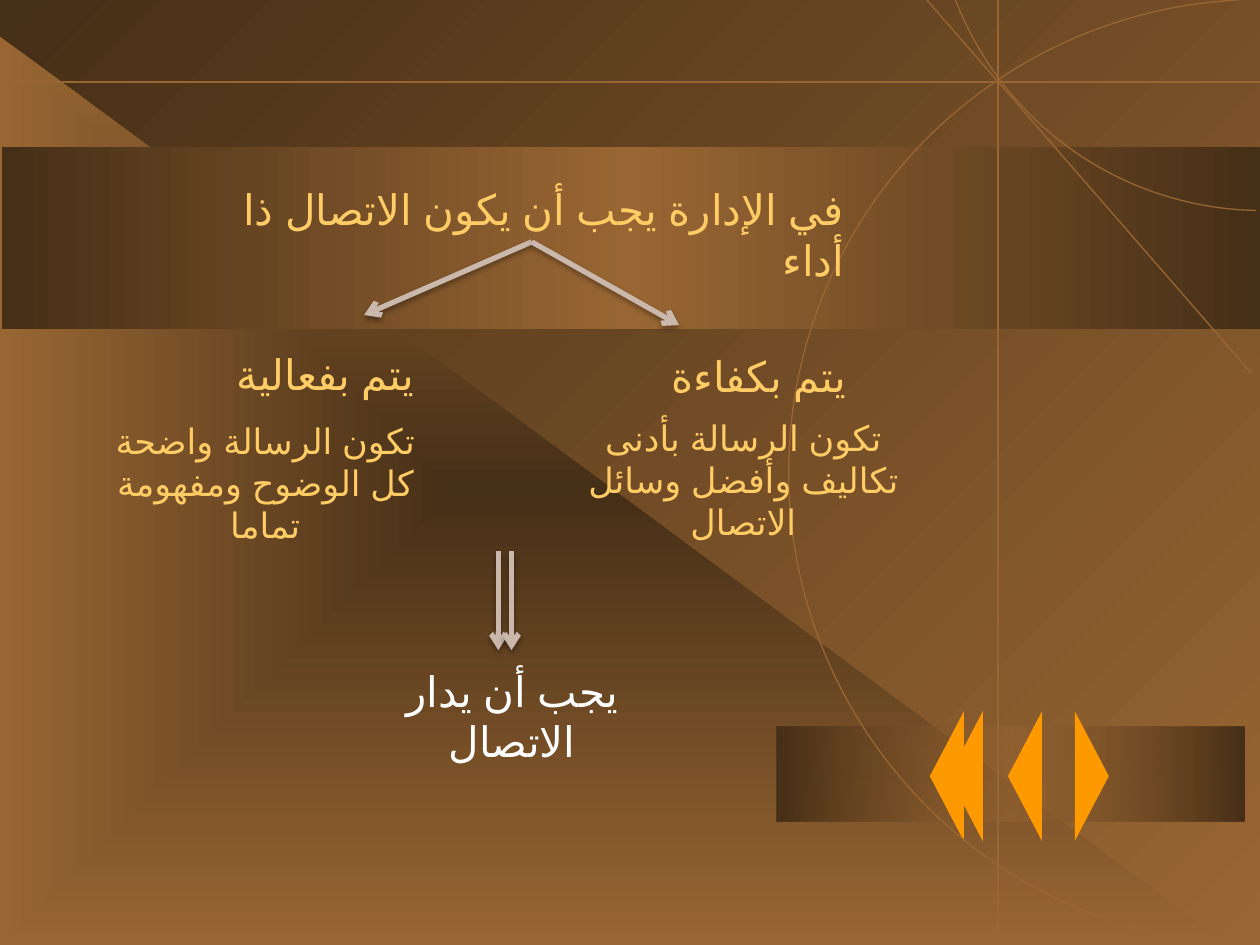
"""Build a slide on effective and efficient communication in management."""
from pptx import Presentation
from pptx.dml.color import RGBColor
from pptx.enum.lang import MSO_LANGUAGE_ID
from pptx.enum.shapes import MSO_CONNECTOR, MSO_SHAPE
from pptx.enum.text import MSO_AUTO_SIZE, PP_ALIGN
from pptx.oxml import parse_xml
from pptx.oxml.ns import nsdecls, qn
from pptx.util import Inches, Pt

STRAIGHT = MSO_CONNECTOR.STRAIGHT
TRIANGLE = MSO_SHAPE.ISOSCELES_TRIANGLE
RECTANGLE = MSO_SHAPE.RECTANGLE
RIGHT_TRIANGLE = MSO_SHAPE.RIGHT_TRIANGLE
LEFT, CENTER, RIGHT = PP_ALIGN.LEFT, PP_ALIGN.CENTER, PP_ALIGN.RIGHT
ARABIC = MSO_LANGUAGE_ID.ARABIC
color = RGBColor.from_string
DARK, BROWN, ORANGE = "462F17", "996633", "FF9900"
GOLD, WHITE, ARROW_COLOR = "FFCC66", "FFFFFF", "CAB8AD"
FONT = "Arial"
LINEAR = '<a:lin ang="{}" scaled="0"/>'
FROM_CENTER = ('<a:path path="rect"><a:fillToRect l="50000" t="50000" '
               'r="50000" b="50000"/></a:path>')
SHADOW = ('<a:outerShdw blurRad="40000" dist="23000" dir="5400000" rotWithShape="0">'
          '<a:srgbClr val="000000"><a:alpha val="35000"/></a:srgbClr></a:outerShdw>')

presentation = Presentation()
presentation.slide_width = Inches(10)
presentation.slide_height = Inches(7.5)
slide = presentation.slides.add_slide(presentation.slide_layouts[6])
column = presentation.slide_width / 100
row = presentation.slide_height / 75


def grid(*lengths):
    """Turn alternating columns and rows into slide lengths."""
    return [round(length * (row if index % 2 else column))
            for index, length in enumerate(lengths)]


def paint_gradient(fill, element, stops, direction):
    """Fill with (position, colour, opacity) stops along a direction."""
    fill.gradient()
    current = next(element.iter(qn("a:gradFill")))
    stop_xml = "".join(
        f'<a:gs pos="{position * 1000}"><a:srgbClr val="{hex_color}">'
        f'<a:alpha val="{opacity * 1000}"/></a:srgbClr></a:gs>'
        for position, hex_color, opacity in stops)
    current.getparent().replace(current, parse_xml(
        f'<a:gradFill {nsdecls("a")} rotWithShape="1"><a:gsLst>{stop_xml}</a:gsLst>'
        f'{direction}</a:gradFill>'))


dark_to_light = [(0, DARK, 100), (100, BROWN, 100)]
paint_gradient(slide.background.fill, slide._element, dark_to_light,
               LINEAR.format(45 * 60000))

panels = [
    (RIGHT_TRIANGLE, (0, 2.9, 97.5, 72.1), dark_to_light, FROM_CENTER),
    (RECTANGLE, (61.65, 57.7, 37.1, 7.5),
     [(0, DARK, 100), (50, BROWN, 50), (100, DARK, 100)], LINEAR.format(0)),
    (RECTANGLE, (0.15, 11.7, 99.85, 14.4),
     [(0, DARK, 100), (50, BROWN, 100), (100, DARK, 100)], LINEAR.format(0)),
]
for preset, box, stops, direction in panels:
    shape = slide.shapes.add_shape(preset, *grid(*box))
    shape.shadow.inherit = False
    shape.line.fill.background()
    paint_gradient(shape.fill, shape._element, stops, direction)

for left, rotation in [(76.2, 270), (71.5, 270), (70, 270), (81.5, 90)]:
    shape = slide.shapes.add_shape(TRIANGLE, *grid(left, 60.25, 10.3, 2.7))
    shape.rotation = rotation
    shape.shadow.inherit = False
    shape.fill.solid()
    shape.fill.fore_color.rgb = color(ORANGE)
    shape.line.fill.background()

large_arc = [(98.3, 0), (78.3, 1), (62.6, 17.5), (62.6, 37.5),
             (62.6, 57.6), (78.5, 74.2), (98.6, 75)]
small_arc = [(75.8, -0.1), (79.6, 9.9), (89.1, 16.5), (99.7, 16.7)]
for arc in (large_arc, small_arc):
    points = [grid(*point) for point in arc]
    builder = slide.shapes.build_freeform(*points[0])
    builder.add_line_segments(points[1:], close=False)
    shape = builder.convert_to_shape()
    segments = list(shape._element.iter(qn("a:lnTo")))
    for first in range(0, len(segments), 3):
        curve = parse_xml(f'<a:cubicBezTo {nsdecls("a")}/>')
        segments[first].addprevious(curve)
        for segment in segments[first:first + 3]:
            curve.append(segment[0])
            segment.getparent().remove(segment)
    shape.shadow.inherit = False
    shape.fill.background()
    shape.line.color.rgb = color(BROWN)
    shape.line.width = Pt(0.75)

texts = [
    ("في الإدارة يجب أن يكون الاتصال ذا أداء", (16.4, 14.1, 51.6, 5.1), 24, GOLD, RIGHT, True),
    ("يتم بكفاءة", (52.3, 27.3, 17.2, 5.1), 24, GOLD, LEFT, False),
    ("يتم بفعالية", (17.8, 27.2, 17.2, 5.1), 24, GOLD, LEFT, False),
    ("تكون الرسالة واضحة كل الوضوح ومفهومة تماما",
     (7, 32.8, 28.1, 7.7), 20, GOLD, CENTER, True),
    ("تكون الرسالة بأدنى تكاليف وأفضل وسائل الاتصال",
     (43, 32.6, 32, 7.7), 20, GOLD, CENTER, True),
    ("يجب أن يدار الاتصال", (26.6, 52.3, 28.1, 5.1), 24, WHITE, CENTER, False),
]
text_boxes = []
for text, box, size, hex_color, alignment, right_to_left in texts:
    text_box = slide.shapes.add_textbox(*grid(*box))
    text_boxes.append(text_box)
    text_frame = text_box.text_frame
    text_frame.word_wrap = True
    text_frame.auto_size = MSO_AUTO_SIZE.NONE
    text_frame.text = text
    paragraph = text_frame.paragraphs[0]
    paragraph.alignment = alignment
    if right_to_left:
        paragraph._p.get_or_add_pPr().set("rtl", "1")
    font = paragraph.runs[0].font
    font.name = FONT
    font.size = Pt(size)
    font.color.rgb = color(hex_color)
    font.language_id = ARABIC
    font._element.append(parse_xml(f'<a:cs {nsdecls("a")} typeface="{FONT}"/>'))
title_box = text_boxes[0]

lines = [
    ((99.3, 29.6, 73.4, -0.2), False, None),
    ((79.2, -0.1, 79.2, 74.4), False, None),
    ((0, 6.5, 100, 6.5), False, None),
    ((42.2, 19.2, 28.9, 25), True, title_box),
    ((42.2, 19.2, 53.9, 25.8), True, title_box),
    ((39.55, 43.75, 39.55, 51.6), True, None),
    ((40.6, 43.75, 40.6, 51.6), True, None),
]
for ends, is_arrow, source in lines:
    connector = slide.shapes.add_connector(STRAIGHT, *grid(*ends))
    connector.line.color.rgb = color(ARROW_COLOR if is_arrow else BROWN)
    connector.line.width = Pt(3 if is_arrow else 0.75)
    if is_arrow:
        connector.line._get_or_add_ln().append(
            parse_xml(f'<a:tailEnd {nsdecls("a")} type="arrow"/>'))
    if source:
        connector.begin_connect(source, 2)
    connector._element.spPr.append(parse_xml(
        f'<a:effectLst {nsdecls("a")}>{SHADOW if is_arrow else ""}</a:effectLst>'))

presentation.save("out.pptx")
